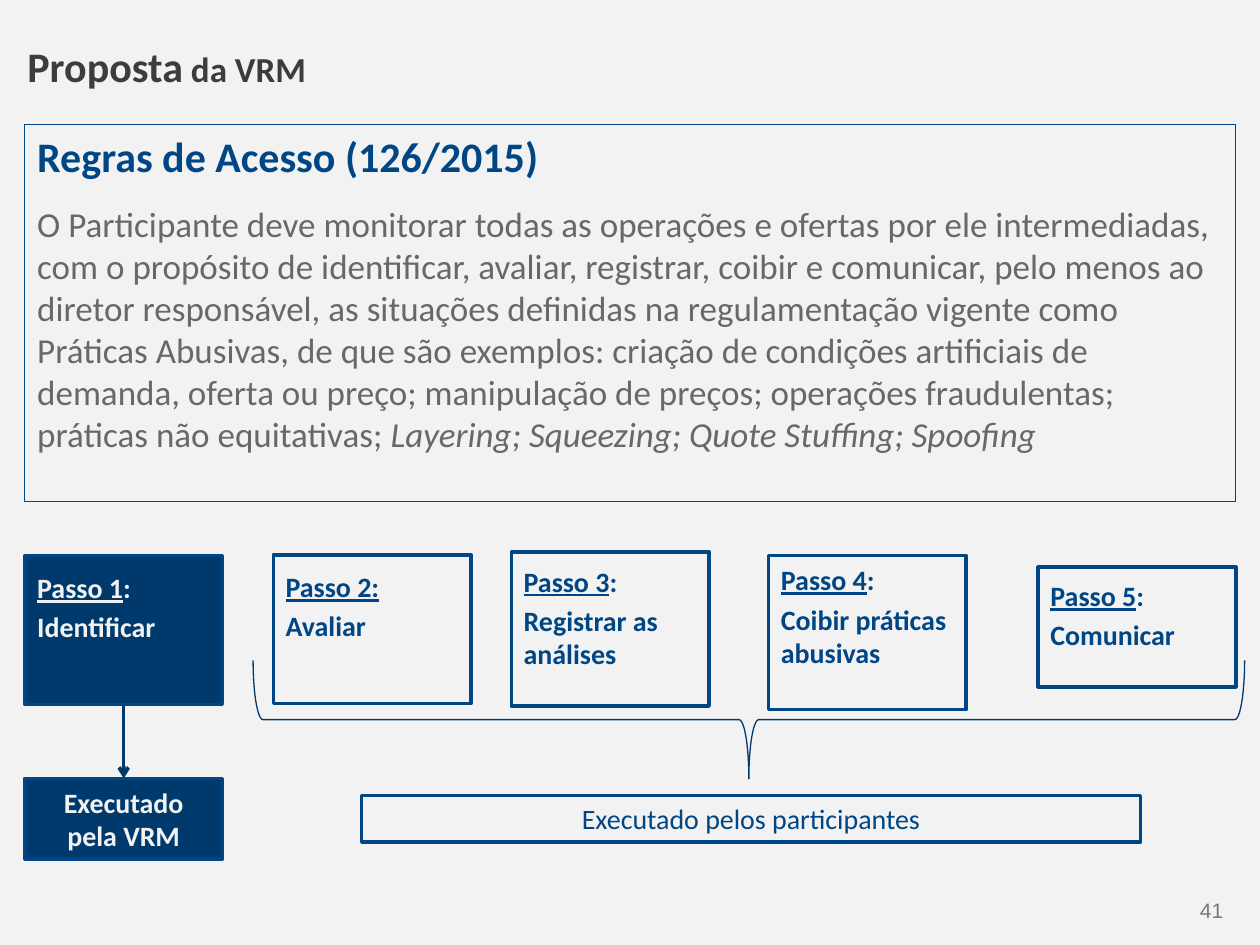
from dataclasses import dataclass

from lxml import etree
from pptx import Presentation
from pptx import util as u
from pptx.dml.color import RGBColor
from pptx.enum import shapes, text
from pptx.oxml import ns


@dataclass(frozen=True)
class Theme:
    font: str = "Calibri"
    number_font: str = "Arial"
    background: str = "F2F2F2"
    title: str = "3C3C3C"
    body: str = "686868"
    blue: str = "004685"
    navy: str = "00396C"
    number: str = "797979"
    heading_size: int = 24
    body_size: int = 20
    label_size: int = 16
    number_size: int = 12
    thin: float = 0.75
    thick: float = 2


THEME = Theme()


def color(value):
    return RGBColor.from_string(value)


def add_run(paragraph, content, size, tint, bold=False, italic=False,
            underline=False, name=THEME.font):
    run = paragraph.add_run()
    run.text = content
    font = run.font
    font.name, font.size, font.color.rgb = name, u.Pt(size), color(tint)
    font.bold, font.italic, font.underline = bold, italic, underline


def add_text_box(slide, box):
    shape = slide.shapes.add_textbox(*map(u.Pt, box))
    shape.text_frame.word_wrap = True
    return shape.text_frame


def add_outline(slide, box, kind=shapes.MSO_SHAPE.RECTANGLE, fill=None,
                line=THEME.blue, width=THEME.thick):
    shape = slide.shapes.add_shape(kind, *map(u.Pt, box))
    shape.shadow.inherit = False
    if fill:
        shape.fill.solid()
        shape.fill.fore_color.rgb = color(fill)
    else:
        shape.fill.background()
    shape.line.color.rgb = color(line)
    shape.line.width = u.Pt(width)
    frame = shape.text_frame
    frame.word_wrap = True
    frame.vertical_anchor = text.MSO_ANCHOR.TOP
    frame.paragraphs[0].alignment = text.PP_ALIGN.LEFT
    return shape


def add_title(slide, box):
    frame = add_text_box(slide, box)
    frame.vertical_anchor = text.MSO_ANCHOR.MIDDLE
    paragraph = frame.paragraphs[0]
    add_run(paragraph, "Proposta", THEME.heading_size, THEME.title, bold=True)
    add_run(paragraph, " da VRM", THEME.body_size, THEME.title, bold=True)


def add_rules(slide, box):
    frame = add_outline(slide, box, width=THEME.thin).text_frame
    add_run(frame.paragraphs[0], "Regras de Acesso (126/2015)",
            THEME.heading_size, THEME.blue, bold=True)
    paragraph = frame.add_paragraph()
    paragraph.alignment = text.PP_ALIGN.LEFT
    paragraph.space_before = u.Pt(12)
    add_run(paragraph,
            "O Participante deve monitorar todas as operações e ofertas por ele "
            "intermediadas, com o propósito de identificar, avaliar, registrar, "
            "coibir e comunicar, pelo menos ao diretor responsável, as situações "
            "definidas na regulamentação vigente como Práticas Abusivas, de que "
            "são exemplos: criação de condições artificiais de demanda, oferta ou "
            "preço; manipulação de preços; operações fraudulentas; práticas não "
            "equitativas; ", THEME.body_size, THEME.body)
    add_run(paragraph, "Layering; Squeezing; Quote Stuffing; Spoofing",
            THEME.body_size, THEME.body, italic=True)


def add_step(slide, box, number, action, inset, fill=None):
    shape = add_outline(slide, box, fill=fill)
    frame = shape.text_frame
    frame.margin_top = u.Pt(inset)
    tint = THEME.background if fill else THEME.blue
    label = frame.paragraphs[0]
    add_run(label, f"Passo {number}", THEME.label_size, tint, bold=True, underline=True)
    add_run(label, ":", THEME.label_size, tint, bold=True, underline=number == 2)
    paragraph = frame.add_paragraph()
    paragraph.alignment = text.PP_ALIGN.LEFT
    paragraph.space_before = u.Pt(3.2)
    add_run(paragraph, action, THEME.label_size, tint, bold=True)
    return shape


def add_owner(slide, box, content, fill=None):
    shape = add_outline(slide, box, fill=fill)
    frame = shape.text_frame
    frame.vertical_anchor = text.MSO_ANCHOR.MIDDLE
    paragraph = frame.paragraphs[0]
    paragraph.alignment = text.PP_ALIGN.CENTER
    add_run(paragraph, content, THEME.label_size,
            THEME.background if fill else THEME.blue, bold=bool(fill))
    return shape


def add_arrow(slide, upper, lower):
    connector = slide.shapes.add_connector(shapes.MSO_CONNECTOR.STRAIGHT, 0, 0, 0, 0)
    connector.begin_connect(upper, 2)
    connector.end_connect(lower, 0)
    connector.line.color.rgb = color(THEME.navy)
    connector.line.width = u.Pt(THEME.thick)
    line = connector.line._get_or_add_ln()
    etree.SubElement(line, ns.qn("a:tailEnd"), type="arrow")
    etree.SubElement(connector._element.spPr, ns.qn("a:effectLst"))


def add_brace(slide, box):
    left, top, width, height = box
    unrotated = (left + (width - height) / 2, top + (height - width) / 2, height, width)
    brace = add_outline(slide, unrotated, shapes.MSO_SHAPE.RIGHT_BRACE,
                        line=THEME.navy, width=THEME.thin)
    brace.rotation = 90


def add_process(slide, box):
    left, top, width, height = box
    step_width = 113
    steps = [
        ("Identificar", 0, 2, 85, 8.6, THEME.navy),
        ("Avaliar", 142, 1.5, 85, 8.6, None),
        ("Registrar as análises", 278, 0, 88, 6.9, None),
        ("Coibir práticas abusivas", 425, 2, 88, 4.2, None),
        ("Comunicar", width - step_width, 8.6, 68.4, 6.3, None),
    ]
    placed = [
        add_step(slide, (left + x, top + y, step_width, tall), number, action, inset, fill)
        for number, (action, x, y, tall, inset, fill) in enumerate(steps, 1)
    ]
    add_brace(slide, (left + 130.4, top + 61.9, 566.6, 67.7))
    add_owner(slide, (left + 192.5, top + 139, 445, 26.6), "Executado pelos participantes")
    owner_height = 46
    owner = add_owner(slide, (left, top + height - owner_height, step_width, owner_height),
                      "Executado pela VRM", THEME.navy)
    add_arrow(slide, placed[0], owner)


def add_page_number(slide, box):
    frame = add_text_box(slide, box)
    frame.margin_left = frame.margin_right = frame.margin_top = frame.margin_bottom = 0
    paragraph = frame.paragraphs[0]
    paragraph.alignment = text.PP_ALIGN.RIGHT
    add_run(paragraph, "41", THEME.number_size, THEME.number, name=THEME.number_font)


def main():
    presentation = Presentation()
    presentation.slide_width, presentation.slide_height = u.Pt(720), u.Pt(540)
    slide = presentation.slides.add_slide(presentation.slide_layouts[6])
    slide.background.fill.solid()
    slide.background.fill.fore_color.rgb = color(THEME.background)
    add_page_number(slide, (679.5, 512.8, 19.5, 14.4))
    add_title(slide, (8.6, 15.1, 544, 45.4))
    add_rules(slide, (14.2, 71.3, 692, 215.5))
    add_process(slide, (14.2, 315.5, 692, 175.3))
    presentation.save("out.pptx")


if __name__ == "__main__":
    main()
